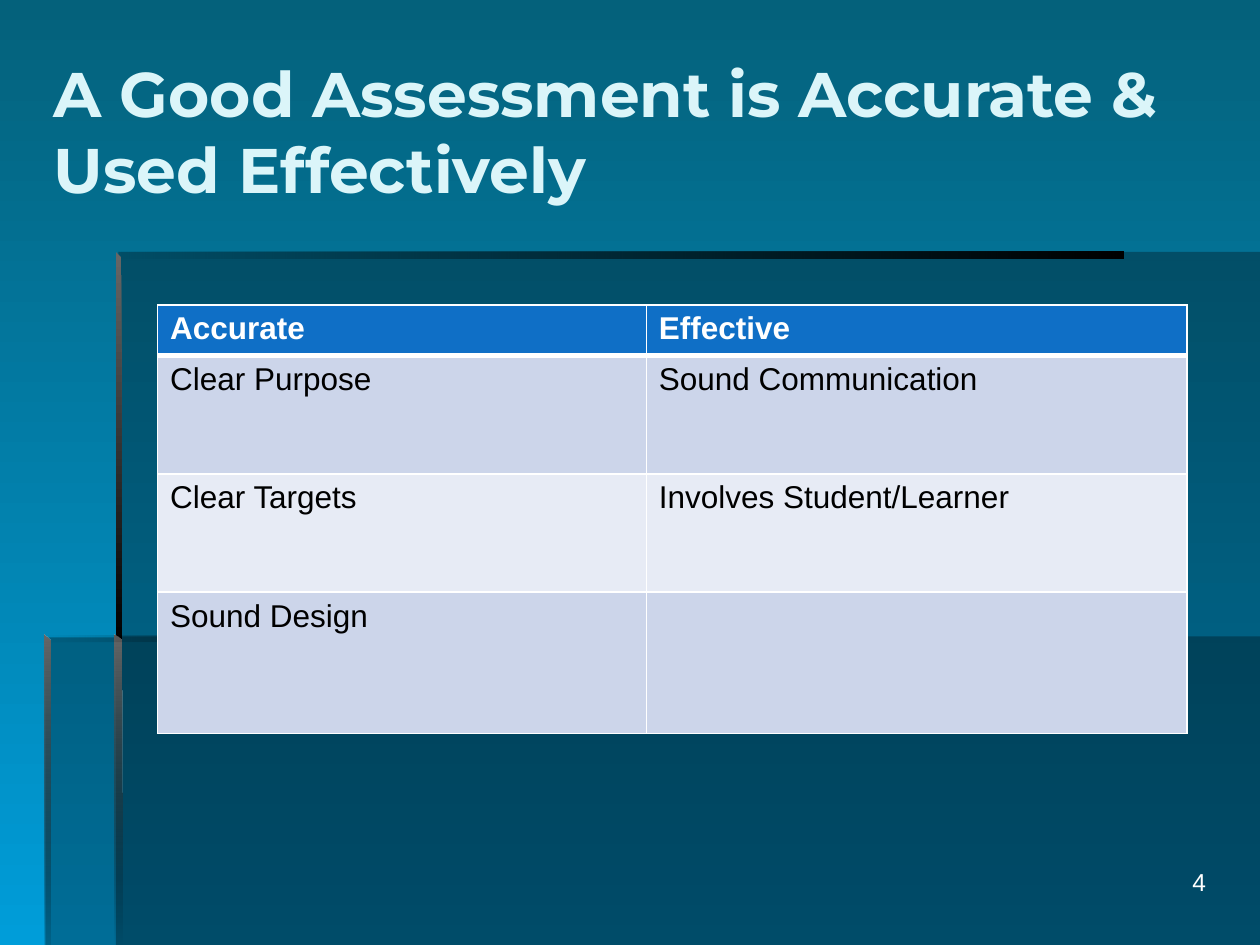
"""Build the slide on accurate and effective assessment."""
from dataclasses import dataclass

from lxml import etree
from pptx import Presentation
from pptx.dml.color import RGBColor
from pptx.enum.text import MSO_ANCHOR, PP_ALIGN
from pptx.oxml.ns import qn
from pptx.util import Inches, Pt

MIDDLE, LEFT, RIGHT = MSO_ANCHOR.MIDDLE, PP_ALIGN.LEFT, PP_ALIGN.RIGHT
COLS, ROWS = 1000, 750
UNIT = Inches(0.01)
ACROSS, DOWN = 0, 270
COLORS = {
    "top": "04617B", "bottom": "009DD9", "title": "DBF5F9",
    "black": "000000", "gray": "666666", "white": "FFFFFF",
    "header": "0F6FC6", "band": "CCD5EA", "light": "E7EBF5",
}


@dataclass(frozen=True)
class Stop:
    color: str
    opacity: int = 100


@dataclass(frozen=True)
class Panel:
    points: tuple
    stops: tuple
    angle: int = ACROSS


@dataclass(frozen=True)
class Label:
    text: str
    box: tuple
    font: str
    size: int
    color: str
    bold: bool = False
    align: PP_ALIGN = LEFT
    anchor: MSO_ANCHOR = MSO_ANCHOR.TOP


SHADE = (Stop("black", 30),)
FADE_IN = (Stop("black", 0), Stop("black"))
EDGE = (Stop("gray"), Stop("black"))
PANELS = (
    Panel(((92, 505), (92, ROWS), (COLS, ROWS), (COLS, 505)), SHADE),
    Panel(((94, 506), (36, 506), (36, ROWS), (COLS, ROWS), (COLS, 200), (94, 200)), SHADE),
    Panel(((92, 200), (92, 205), (892, 205), (892, 200)), FADE_IN),
    Panel(((92, 200), (92, 510), (97, 510), (96, 204)), EDGE, DOWN),
    Panel(((91, ROWS), (97, ROWS), (96, 508), (91, 504)),
          (Stop("gray"), Stop("black", 0)), DOWN),
    Panel(((35, 504), (35, 509), (535, 509), (535, 504)), FADE_IN),
    Panel(((35, 504), (35, ROWS), (40, ROWS), (40, 509)),
          (Stop("gray"), Stop("black", 10)), DOWN),
)
LABELS = (
    Label("A Good Assessment is Accurate & Used Effectively", (33, 25, 917, 157),
          "Montserrat", 36, "title", bold=True, anchor=MIDDLE),
    Label("4", (759, 683, 208, 52), "Arial", 14, "white", align=RIGHT),
)
TABLE_AT = (125, 242)
COL_WIDTHS = (388, 429)
ROW_HEIGHTS = (40, 94, 94, 112)
CELLS = (
    ("Accurate", "Effective"),
    ("Clear Purpose", "Sound Communication"),
    ("Clear Targets", "Involves Student/Learner"),
    ("Sound Design", ""),
)


def rgb(name: str) -> RGBColor:
    return RGBColor.from_string(COLORS[name])


def paint(fill, stops: tuple, angle: int) -> None:
    if len(stops) == 1:
        fill.solid()
        fill.fore_color.rgb = rgb(stops[0].color)
        return
    fill.gradient()
    fill.gradient_angle = angle
    for target, stop in zip(fill.gradient_stops, stops):
        target.color.rgb = rgb(stop.color)


def add_panel(slide, panel: Panel) -> None:
    start, *rest = panel.points
    builder = slide.shapes.build_freeform(*start, scale=UNIT)
    builder.add_line_segments(rest, close=True)
    sp = builder.convert_to_shape()
    sp.shadow.inherit = False
    paint(sp.fill, panel.stops, panel.angle)
    for clr, stop in zip(sp._element.spPr.iter(qn("a:srgbClr")), panel.stops):
        if stop.opacity < 100:
            etree.SubElement(clr, qn("a:alpha"), val=str(stop.opacity * 1000))
    sp.line.fill.background()


def add_run(p, text: str, font: str, size: int, color: str, bold: bool) -> None:
    r = p.add_run()
    r.text = text
    r.font.name, r.font.size, r.font.bold = font, Pt(size), bold
    r.font.color.rgb = rgb(color)


def add_label(slide, label: Label) -> None:
    tf = slide.shapes.add_textbox(*(n * UNIT for n in label.box)).text_frame
    tf.word_wrap = True
    tf.vertical_anchor = label.anchor
    p = tf.paragraphs[0]
    p.alignment = label.align
    add_run(p, label.text, label.font, label.size, label.color, label.bold)


def add_borders(cell, top: int, bottom: int) -> None:
    tc_pr = cell._tc.get_or_add_tcPr()
    sides = (("L", 1), ("R", 1), ("T", top), ("B", bottom))
    for i, (side, width) in enumerate(sides):
        ln = etree.Element(qn(f"a:ln{side}"), w=str(Pt(width)))
        solid = etree.SubElement(ln, qn("a:solidFill"))
        etree.SubElement(solid, qn("a:srgbClr"), val=COLORS["white"])
        tc_pr.insert(i, ln)


def add_table(slide) -> None:
    size = sum(COL_WIDTHS), sum(ROW_HEIGHTS)
    frame = slide.shapes.add_table(len(CELLS), len(COL_WIDTHS),
                                   *(n * UNIT for n in TABLE_AT + size))
    table = frame.table
    for col, width in zip(table.columns, COL_WIDTHS):
        col.width = width * UNIT
    for i, (row, height, texts) in enumerate(zip(table.rows, ROW_HEIGHTS, CELLS)):
        row.height = height * UNIT
        head = i == 0
        fill = "header" if head else ("light", "band")[i % 2]
        for cell, text in zip(row.cells, texts):
            cell.fill.solid()
            cell.fill.fore_color.rgb = rgb(fill)
            add_borders(cell, 3 if i == 1 else 1, 3 if head else 1)
            if text:
                add_run(cell.text_frame.paragraphs[0], text, "Arial", 18,
                        "white" if head else "black", head)


def main() -> None:
    prs = Presentation()
    prs.slide_width, prs.slide_height = COLS * UNIT, ROWS * UNIT
    slide = prs.slides.add_slide(prs.slide_layouts[6])
    paint(slide.background.fill, (Stop("top"), Stop("bottom")), DOWN)
    for panel in PANELS:
        add_panel(slide, panel)
    for label in LABELS:
        add_label(slide, label)
    add_table(slide)
    prs.save("out.pptx")


if __name__ == "__main__":
    main()
